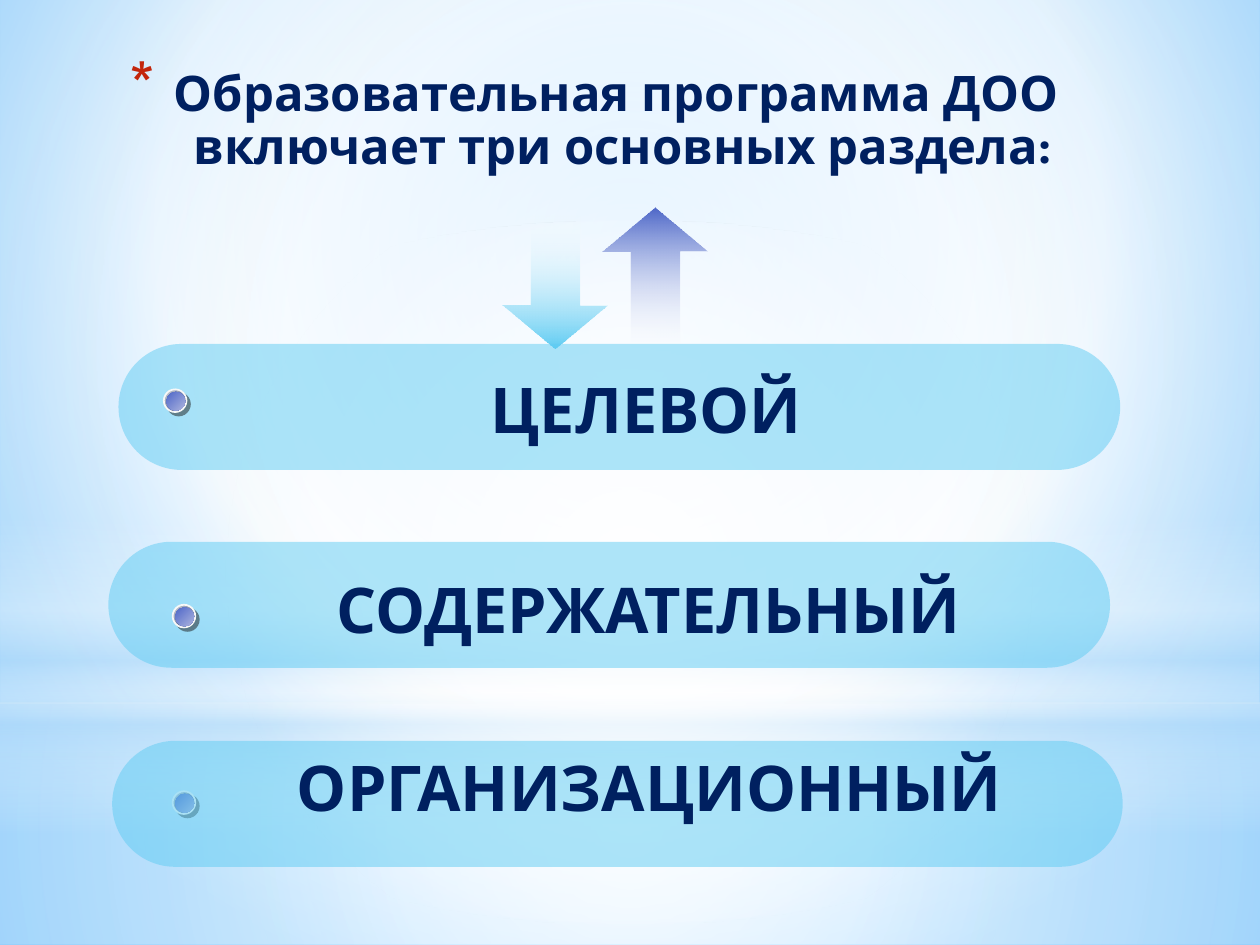
from lxml.etree import SubElement
from pptx import Presentation
from pptx.dml.color import RGBColor
from pptx.enum.shapes import MSO_SHAPE
from pptx.enum.text import MSO_ANCHOR, PP_ALIGN
from pptx.oxml.ns import qn
from pptx.util import Inches, Pt

COLORS = {
    "white": "FFFFFF", "sky": "9ED5FF", "blue": "5BB9FF", "haze": "B4DCFA",
    "navy": "002060", "red": "C3260C", "cyan": "5ECCF3", "indigo": "4E67C8",
    "lilac": "ACB3DE", "silver": "DDDDE1", "steel": "223864",
    "rim": "F8F8F8", "shade": "1C1C1C",
}
CENTER = (50, 50, 50, 50)
FONT = {"name": "Karla", "bold": True}


def set_gradient(fill, owner, stops, angle=None, focus=None):
    """Fill with (position, colour, opacity) stops, linear or circular."""
    fill.gradient()
    grad = next(owner.iter(qn("a:gradFill")))
    grad.clear()
    grad.set("rotWithShape", "1")
    stop_list = SubElement(grad, qn("a:gsLst"))
    for pos, color, opacity in stops:
        gs = SubElement(stop_list, qn("a:gs"), pos=str(pos * 1000))
        clr = SubElement(gs, qn("a:srgbClr"), val=COLORS[color])
        if opacity < 100:
            SubElement(clr, qn("a:alpha"), val=str(opacity * 1000))
    if focus:
        circle = SubElement(grad, qn("a:path"))
        circle.set("path", "circle")
        sides = {side: str(v * 1000) for side, v in zip("ltrb", focus)}
        SubElement(circle, qn("a:fillToRect"), sides)
    else:
        SubElement(grad, qn("a:lin"), ang=str(angle * 60000), scaled="0")


def add_plain(shapes, kind, *box):
    """Add a preset shape without line or shadow."""
    sp = shapes.add_shape(kind, *[Inches(v) for v in box])
    sp.shadow.inherit = False
    sp.line.fill.background()
    return sp


prs = Presentation()
prs.slide_width, prs.slide_height = Inches(10), Inches(7.5)
s = prs.slides.add_slide(prs.slide_layouts[5])

# Background and its light layers
set_gradient(s.background.fill, s._element,
             [(0, "sky", 100), (60, "white", 100), (100, "blue", 100)],
             focus=(20, 10, 20, 60))
layers = [
    (MSO_SHAPE.RECTANGLE, (0, 5.58, 10, 1.92), {"focus": CENTER},
     [(0, "white", 91), (37, "white", 76), (100, "haze", 79)]),
    (MSO_SHAPE.RECTANGLE, (0, 0, 10, 5.58), {"focus": CENTER},
     [(0, "white", 89), (48, "white", 62), (100, "haze", 79)]),
    (MSO_SHAPE.RECTANGLE, (0, 4.12, 10, 2.5), {"angle": 90},
     [(0, "white", 0), (29, "white", 30), (45, "haze", 40),
      (55, "white", 26), (65, "haze", 60), (100, "white", 0)]),
    (MSO_SHAPE.OVAL, (0, 1.75, 10, 5.58), {"focus": CENTER},
     [(0, "white", 100), (56, "white", 0)]),
]
for kind, box, direction, stops in layers:
    sp = add_plain(s.shapes, kind, *box)
    set_gradient(sp.fill, sp._element, stops, **direction)

# Title with a star bullet, in front of the layers
title = s.shapes.title
s.shapes._spTree.append(title._element)
title.left, title.top = Inches(0.86), Inches(0.47)
title.width, title.height = Inches(7.81), Inches(1.25)
tf = title.text_frame
tf.word_wrap = True
tf.vertical_anchor = MSO_ANCHOR.TOP
tf.margin_top = Inches(0.08)
tf.text = "Образовательная программа ДОО \vвключает три основных раздела:"
p = tf.paragraphs[0]
p.alignment = PP_ALIGN.CENTER
p.line_spacing = 0.9
pPr = p._p.get_or_add_pPr()
pPr.set("marL", str(Inches(0.35)))
pPr.set("indent", str(Inches(-0.35)))
SubElement(SubElement(pPr, qn("a:buClr")), qn("a:srgbClr"), val=COLORS["red"])
SubElement(pPr, qn("a:buSzPct"), val="128000")
SubElement(pPr, qn("a:buChar"), char="*")
for r in p.runs:
    for name, value in {**FONT, "size": Pt(28)}.items():
        setattr(r.font, name, value)
    r.font.color.rgb = RGBColor.from_string(COLORS["navy"])

# Arrows: down and up
arrows = [((3.87, 1.82, 1.07, 0.83), 90, "cyan"),
          ((4.61, 1.82, 1.18, 0.83), 270, "indigo")]
for box, rotation, color in arrows:
    sp = add_plain(s.shapes, MSO_SHAPE.RIGHT_ARROW, *box)
    sp.rotation = rotation
    sp.adjustments[0], sp.adjustments[1] = 0.465, 0.421
    set_gradient(sp.fill, sp._element,
                 [(0, "white", 0), (100, color, 100)], angle=0)

# Sections: bar, label and round marker (the last marker lies under its bar)
sections = [
    ("ЦЕЛЕВОЙ", (0.94, 2.73, 7.95, 1), (1.64, 2.96, 6.98, 0.65), (1.3, 3.09), False),
    ("СОДЕРЖАТЕЛЬНЫЙ", (0.86, 4.3, 7.95, 1), (1.72, 4.55, 6.86, 0.65), (1.37, 4.8), False),
    ("ОРГАНИЗАЦИОННЫЙ", (0.89, 5.88, 8.02, 1), (1.81, 5.96, 6.69, 0.65), (1.37, 6.28), True),
]
for label, bar_box, text_box, (x, y), marker_below in sections:
    bar = add_plain(s.shapes, MSO_SHAPE.ROUNDED_RECTANGLE, *bar_box)
    bar.adjustments[0] = 0.5
    bar.fill.solid()
    bar.fill.fore_color.rgb = RGBColor.from_string(COLORS["cyan"])
    clr = next(bar._element.spPr.iter(qn("a:srgbClr")))
    SubElement(clr, qn("a:alpha"), val="50000")

    tf = s.shapes.add_textbox(*[Inches(v) for v in text_box]).text_frame
    tf.word_wrap = True
    p = tf.paragraphs[0]
    p.alignment = PP_ALIGN.CENTER
    p.line_spacing = 0.9
    r = p.add_run()
    r.text = label
    for name, value in {**FONT, "size": Pt(36)}.items():
        setattr(r.font, name, value)
    r.font.color.rgb = RGBColor.from_string(COLORS["navy"])

    marker = s.shapes.add_group_shape()
    rim = add_plain(marker.shapes, MSO_SHAPE.OVAL, x, y, 0.18, 0.18)
    set_gradient(rim.fill, rim._element,
                 [(0, "silver", 100), (100, "steel", 100)], angle=45)
    rim.line.color.rgb = RGBColor.from_string(COLORS["rim"])
    rim.line.width = Pt(1)
    effects = rim._element.spPr.find(qn("a:effectLst"))
    shadow = SubElement(effects, qn("a:outerShdw"), dist=str(Pt(2.8)),
                        dir=str(45 * 60000), algn="ctr", rotWithShape="0")
    clr = SubElement(shadow, qn("a:srgbClr"), val=COLORS["shade"])
    SubElement(clr, qn("a:alpha"), val="50000")
    core = add_plain(marker.shapes, MSO_SHAPE.OVAL, x + 0.02, y + 0.02, 0.15, 0.15)
    set_gradient(core.fill, core._element,
                 [(0, "indigo", 100), (100, "lilac", 100)], angle=45)
    if marker_below:
        bar._element.addprevious(marker._element)

prs.save("out.pptx")
